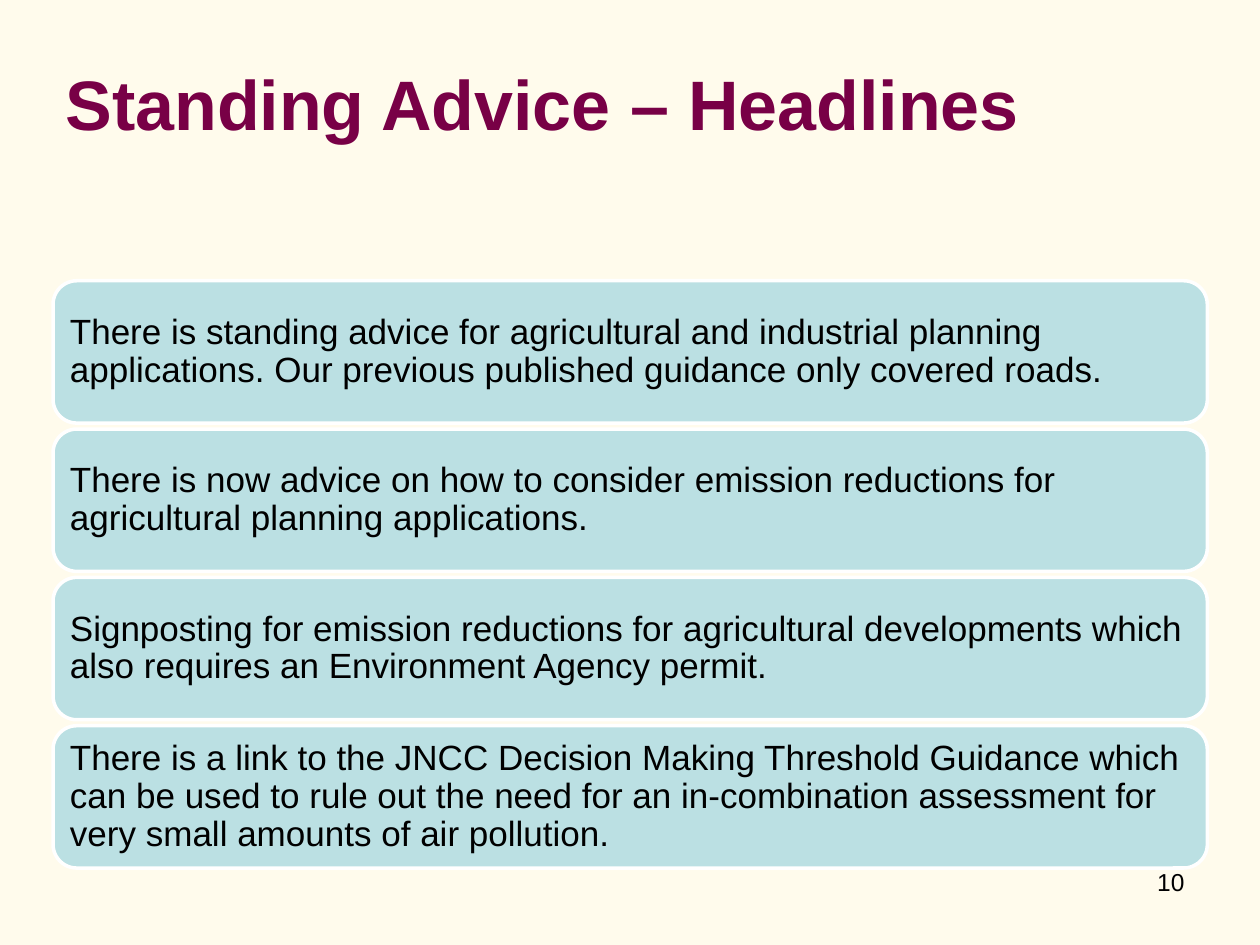
from dataclasses import dataclass

from pptx import Presentation
from pptx import util as u
from pptx.dml.color import RGBColor
from pptx.enum import shapes, text


@dataclass(frozen=True)
class Theme:
    font: str = "Arial"
    background: str = "FFFBEC"
    heading: str = "780046"
    body: str = "000000"
    card: str = "BBE0E3"
    card_edge: str = "FFFFFF"
    heading_size: int = 40
    body_size: int = 20
    number_size: int = 14


HEADLINES = (
    "There is standing advice for agricultural and industrial planning applications. "
    "Our previous published guidance only covered roads.",
    "There is now advice on how to consider emission reductions for "
    "agricultural planning applications.",
    "Signposting for emission reductions for agricultural developments which "
    "also requires an Environment Agency permit.",
    "There is a link to the JNCC Decision Making Threshold Guidance which can be used "
    "to rule out the need for an in-combination assessment for very small amounts "
    "of air pollution.",
)

# Card column, in centimetres
LEFT, FIRST_TOP = 1.07, 5.66
CARD_WIDTH, CARD_HEIGHT, PITCH = 23.27, 2.87, 2.99


def write(frame, words, *, font, size, color, bold=False,
          align=text.PP_ALIGN.LEFT, anchor=text.MSO_ANCHOR.MIDDLE, spacing=1.0):
    """Fill a text frame with one formatted paragraph."""
    frame.word_wrap = True
    frame.auto_size = text.MSO_AUTO_SIZE.NONE
    frame.vertical_anchor = anchor
    paragraph = frame.paragraphs[0]
    paragraph.alignment = align
    paragraph.line_spacing = spacing
    run = paragraph.add_run()
    run.text = words
    run.font.name = font
    run.font.size = u.Pt(size)
    run.font.bold = bold
    run.font.color.rgb = RGBColor.from_string(color)


class SlideBuilder:
    def __init__(self, slide, theme):
        self.slide = slide
        self.theme = theme

    def background(self):
        fill = self.slide.background.fill
        fill.solid()
        fill.fore_color.rgb = RGBColor.from_string(self.theme.background)

    def title(self, words, left, top, width, height):
        heading = self.slide.shapes.title
        heading.left, heading.top = u.Cm(left), u.Cm(top)
        heading.width, heading.height = u.Cm(width), u.Cm(height)
        write(heading.text_frame, words, font=self.theme.font, bold=True,
              size=self.theme.heading_size, color=self.theme.heading)

    def card(self, words, left, top, width, height):
        card = self.slide.shapes.add_shape(
            shapes.MSO_SHAPE.ROUNDED_RECTANGLE,
            u.Cm(left), u.Cm(top), u.Cm(width), u.Cm(height))
        card.shadow.inherit = False
        card.fill.solid()
        card.fill.fore_color.rgb = RGBColor.from_string(self.theme.card)
        card.line.color.rgb = RGBColor.from_string(self.theme.card_edge)
        card.line.width = u.Pt(2)
        frame = card.text_frame
        frame.margin_left = frame.margin_right = u.Cm(0.2)
        frame.margin_top = frame.margin_bottom = u.Cm(0.2)
        write(frame, words, font=self.theme.font, size=self.theme.body_size,
              color=self.theme.body, spacing=0.9)

    def page_number(self, number, left, top, width, height):
        label = self.slide.shapes.add_textbox(
            u.Cm(left), u.Cm(top), u.Cm(width), u.Cm(height))
        write(label.text_frame, number, font=self.theme.font,
              size=self.theme.number_size, color=self.theme.body,
              align=text.PP_ALIGN.RIGHT, anchor=text.MSO_ANCHOR.TOP)


def main():
    deck = Presentation()
    deck.slide_width, deck.slide_height = u.Cm(25.4), u.Cm(19.05)
    title_only = deck.slide_layouts[5]
    builder = SlideBuilder(deck.slides.add_slide(title_only), Theme())

    # Heading
    builder.background()
    builder.title("Standing Advice – Headlines", LEFT, 1.12, 22.38, 1.88)

    # Headline cards
    for row, headline in enumerate(HEADLINES):
        builder.card(headline, LEFT, FIRST_TOP + row * PITCH, CARD_WIDTH, CARD_HEIGHT)

    # Footer
    builder.page_number("10", 18.21, 17.35, 5.92, 1.32)
    deck.save("out.pptx")


if __name__ == "__main__":
    main()
